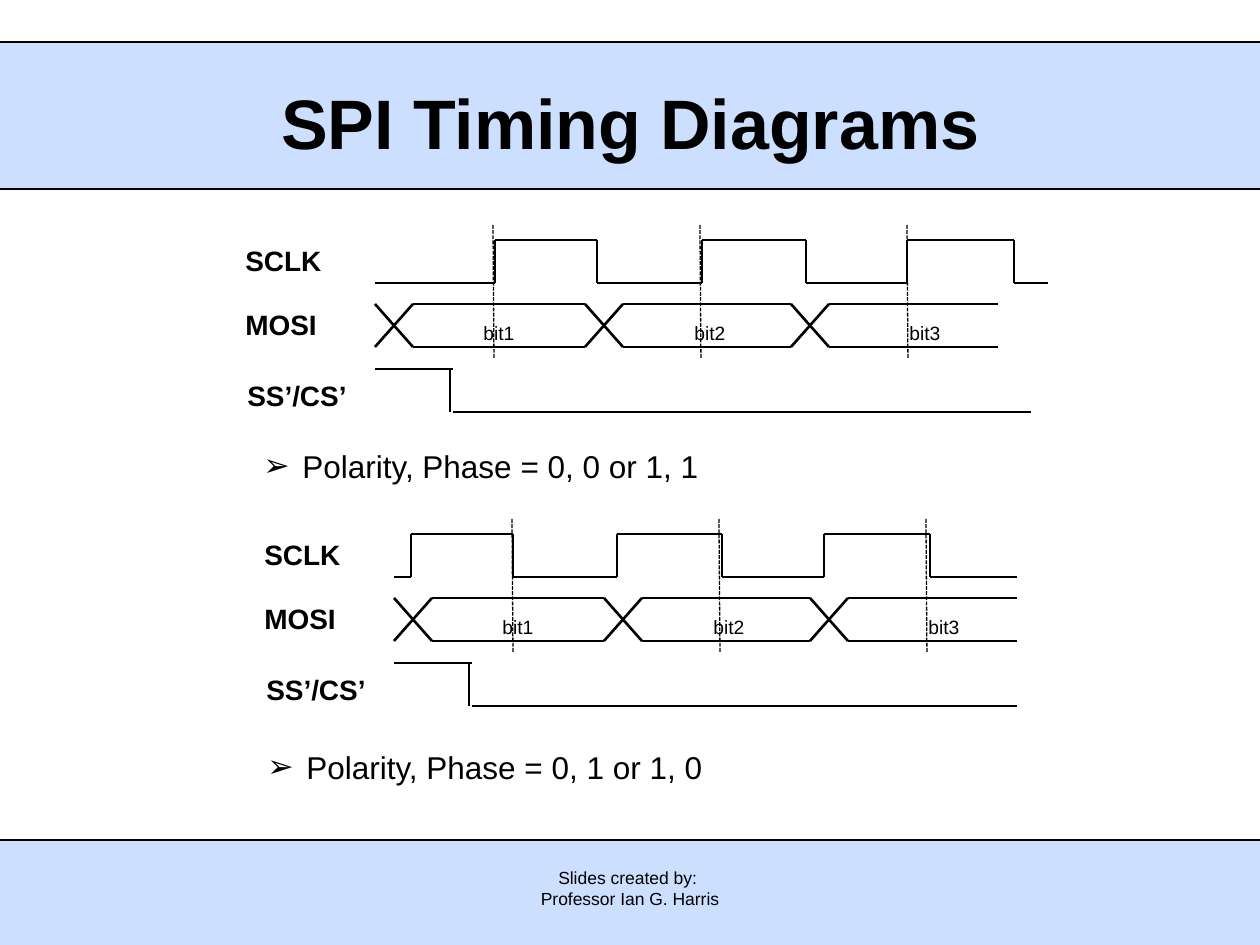
from dataclasses import dataclass
from itertools import pairwise

from lxml.etree import SubElement
from pptx import Presentation
from pptx.dml.color import RGBColor
from pptx.enum.dml import MSO_LINE
from pptx.enum.shapes import MSO_CONNECTOR, MSO_SHAPE
from pptx.enum.text import MSO_ANCHOR, PP_ALIGN
from pptx.oxml.ns import qn
from pptx.util import Pt

PX = 914400 // 126
BLACK = "000000"
BAND = "CDDFFF"
FONT = "Arial"
PULSE = 43
CROSSING = 38


@dataclass
class Band:
    top: int
    height: int
    edges: tuple[int, ...]


@dataclass
class Timing:
    left: int
    top: int
    clock_edges: tuple[int, ...]
    clock_end: int
    select_end: int
    note: str
    note_left: int
    note_top: int


@dataclass
class Label:
    text: str
    left: int
    top: int
    width: int


BANDS = (Band(840, 105, (840,)), Band(42, 147, (42, 189)))
TIMINGS = (
    Timing(375, 225, (120, 222, 327, 431, 532, 639), 673, 656,
           "Polarity, Phase = 0, 0 or 1, 1", 251, 441),
    Timing(394, 519, (17, 119, 223, 328, 430, 536), 623, 623,
           "Polarity, Phase = 0, 1 or 1, 0", 255, 742),
)
SIGNALS = (Label("SCLK", -142, 12, 102), Label("MOSI", -142, 76, 98),
           Label("SS’/CS’", -140, 147, 126))
BITS = (Label("bit1", 96, 90, 57), Label("bit2", 307, 90, 57), Label("bit3", 522, 90, 57))
BIT_STARTS = (0, 210, 416, 623)
SAMPLES = (118, 325, 532)


def color(value: str) -> RGBColor:
    return RGBColor.from_string(value)


def add_line(shapes, x1: int, y1: int, x2: int, y2: int, width: float = 1.5, dashed: bool = False):
    line = shapes.add_connector(MSO_CONNECTOR.STRAIGHT, x1 * PX, y1 * PX, x2 * PX, y2 * PX)
    line.line.color.rgb = color(BLACK)
    line.line.width = Pt(width)
    if dashed:
        line.line.dash_style = MSO_LINE.SQUARE_DOT
    SubElement(line._element.spPr, qn("a:effectLst"))
    return line


def add_text(shapes, text: str, left: int, top: int, width: int, height: int, size: int,
             bold: bool = False, wrap: bool = False, align=PP_ALIGN.LEFT, anchor=MSO_ANCHOR.TOP):
    box = shapes.add_textbox(left * PX, top * PX, width * PX, height * PX)
    frame = box.text_frame
    frame.text = text
    frame.word_wrap = wrap
    frame.vertical_anchor = anchor
    for para in frame.paragraphs:
        para.alignment = align
        for span in para.runs:
            span.font.name = FONT
            span.font.size = Pt(size)
            span.font.bold = bold
            span.font.color.rgb = color(BLACK)
    return box


def add_band(page, band: Band) -> None:
    box = page.shapes.add_shape(MSO_SHAPE.RECTANGLE, 0, band.top * PX, 1260 * PX, band.height * PX)
    box.shadow.inherit = False
    box.fill.solid()
    box.fill.fore_color.rgb = color(BAND)
    box.line.color.rgb = color(BAND)
    box.line.width = Pt(0.75)
    for edge in band.edges:
        add_line(page.shapes, 0, edge, 1260, edge, 0.75)


def add_data(shapes, left: int, high: int) -> None:
    low = high + PULSE
    for start, end in pairwise(BIT_STARTS):
        crossed = left + start + CROSSING
        for near, far in ((high, low), (low, high)):
            add_line(shapes, crossed, near, left + end, near)
            add_line(shapes, crossed, near, left + start, far)


def add_clock(shapes, timing: Timing, high: int) -> None:
    low = high + PULSE
    stops = (0, *timing.clock_edges, timing.clock_end)
    for index, (start, end) in enumerate(pairwise(stops)):
        level = high if index % 2 else low
        add_line(shapes, timing.left + start, level, timing.left + end, level)
    for edge in timing.clock_edges:
        add_line(shapes, timing.left + edge, low, timing.left + edge, high)


def add_select(shapes, timing: Timing, high: int) -> None:
    low = high + PULSE
    left = timing.left
    add_line(shapes, left + 75, low, left + 75, high)
    add_line(shapes, left, high, left + 78, high)
    add_line(shapes, left + 78, low, left + timing.select_end, low)


def add_note(page, timing: Timing) -> None:
    box = add_text(page.shapes, timing.note, timing.note_left, timing.note_top, 465, 50, 18)
    properties = box.text_frame.paragraphs[0]._p.get_or_add_pPr()
    properties.set("marL", str(39 * PX))
    properties.set("indent", str(-39 * PX))
    bullet_color = SubElement(properties, qn("a:buClr"))
    SubElement(bullet_color, qn("a:srgbClr")).set("val", BLACK)
    SubElement(properties, qn("a:buFont")).set("typeface", FONT)
    SubElement(properties, qn("a:buChar")).set("char", "➢")


def add_timing(page, timing: Timing) -> None:
    shapes = page.shapes.add_group_shape().shapes
    left, top = timing.left, timing.top
    add_data(shapes, left, top + 79)
    for bit in BITS:
        add_text(shapes, bit.text, left + bit.left, top + bit.top, bit.width, 37, 11)
    add_clock(shapes, timing, top + 15)
    for sample in SAMPLES:
        add_line(shapes, left + sample, top, left + sample + 1, top + 134, 0.75, dashed=True)
    add_select(shapes, timing, top + 144)
    for signal in SIGNALS:
        add_text(shapes, signal.text, left + signal.left, top + signal.top,
                 signal.width, 47, 16, bold=True)
    add_note(page, timing)


def main() -> None:
    deck = Presentation()
    deck.slide_width = 1260 * PX
    deck.slide_height = 945 * PX
    page = deck.slides.add_slide(deck.slide_layouts[6])
    for band in BANDS:
        add_band(page, band)
    add_text(page.shapes, "Slides created by: \nProfessor Ian G. Harris", 431, 861, 398, 62, 10,
             wrap=True, align=PP_ALIGN.CENTER)
    add_text(page.shapes, "SPI Timing Diagrams", 95, 42, 1071, 158, 40, bold=True,
             wrap=True, align=PP_ALIGN.CENTER, anchor=MSO_ANCHOR.MIDDLE)
    for timing in TIMINGS:
        add_timing(page, timing)
    deck.save("out.pptx")


if __name__ == "__main__":
    main()
